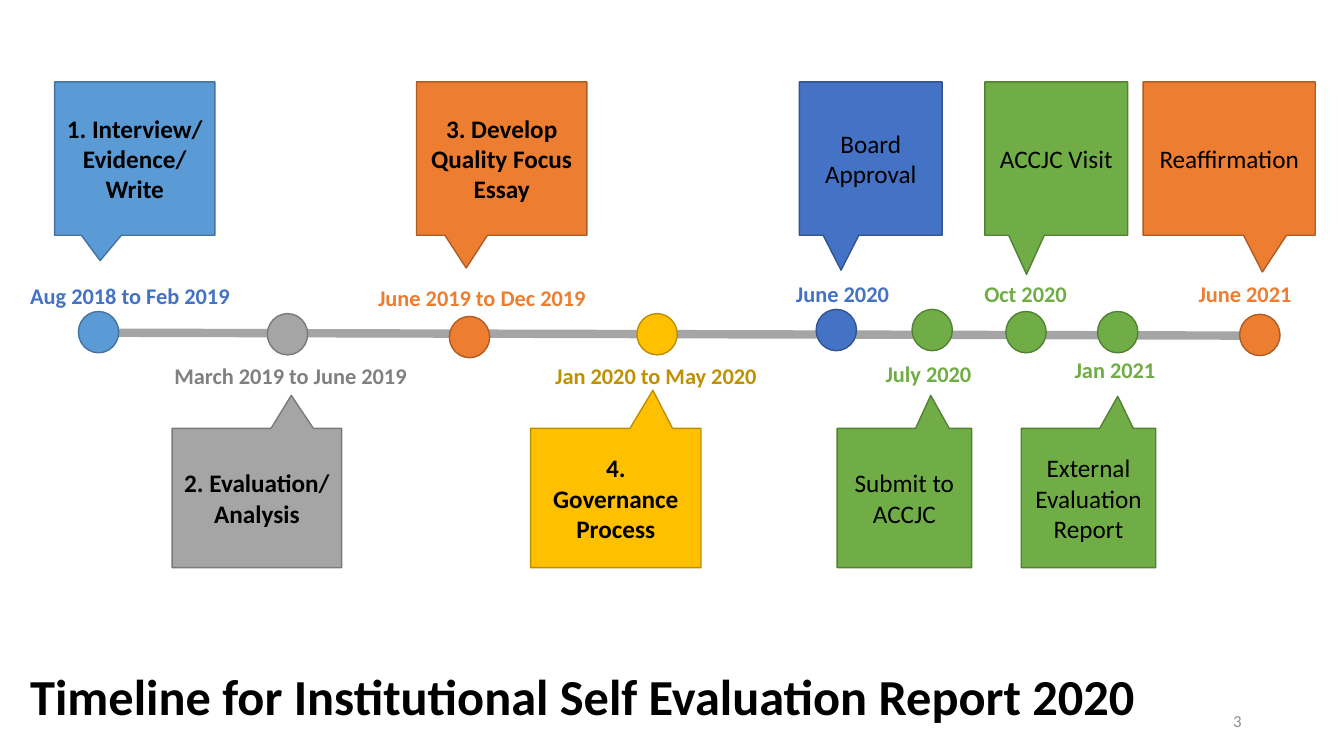
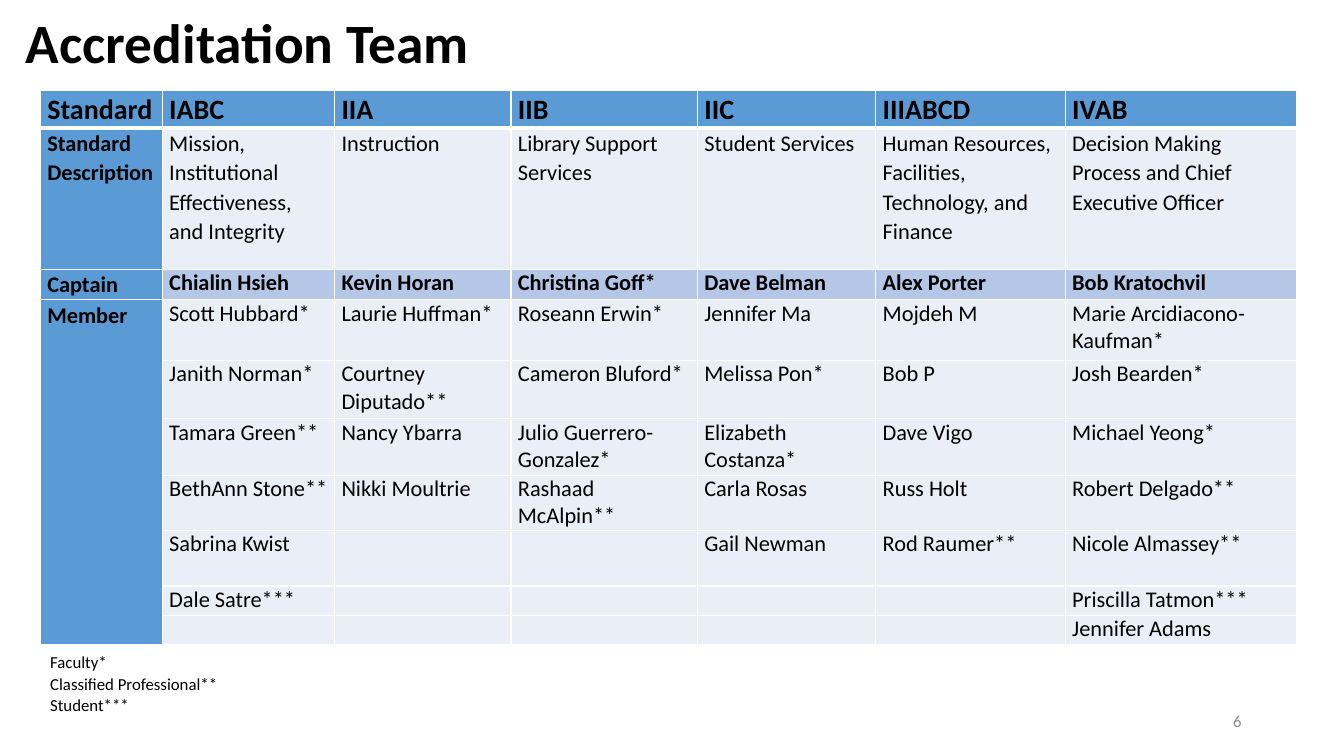
import lxml.etree
import pptx
import pptx.dml.color
import pptx.enum.shapes
import pptx.enum.text
import pptx.oxml.ns
import pptx.util

Pt = pptx.util.Pt
qn = pptx.oxml.ns.qn
SHAPE = pptx.enum.shapes.MSO_SHAPE
ALIGN = pptx.enum.text.PP_ALIGN
ANCHOR = pptx.enum.text.MSO_ANCHOR

BLACK, WHITE, BLUE, MIST, LAVENDER = "000000", "FFFFFF", "5B9BD5", "EAEFF7", "B4C7E7"
HUES = {
    "blue": (BLUE, "43739E", "4472C4"),
    "gray": ("A5A5A5", "7A7A7A", "808080"),
    "orange": ("ED7D31", "AF5C24", "ED7D31"),
    "gold": ("FFC000", "BD8E00", "BF9000"),
    "navy": ("4472C4", "325491", "4472C4"),
    "green": ("70AD47", "538035", "70AD47"),
}

MILESTONES = [
    ("1. Interview/\nEvidence/\nWrite", "blue", True, (39, 114.5), (-0.216, 0.666),
     (56, 222.5), "Aug 2018 to Feb 2019", (14.5, 198, 157.5)),
    ("2. Evaluation/\nAnalysis", "gray", True, (123, 121), (0.203, -0.737),
     (191, 224), "March 2019 to June 2019", (117.5, 255, 183)),
    ("3. Develop Quality Focus Essay", "orange", True, (297.5, 121.7), (-0.208, 0.714),
     (321, 226), "June 2019 to Dec 2019", (263, 199.5, 163.5)),
    ("4. Governance Process", "gold", True, (379, 121.7), (0.218, -0.774),
     (455, 224), "Jan 2020 to May 2020", (389.5, 255.5, 160.5)),
    ("Board Approval", "navy", False, (571, 102), (-0.208, 0.728),
     (583, 221), "June 2020", (561.5, 196.5, 81.5)),
    ("Submit to ACCJC", "green", False, (598, 96), (0.196, -0.737),
     (651.5, 221), "July 2020", (625.5, 254, 76.5)),
    ("ACCJC Visit", "green", False, (703.5, 102), (-0.208, 0.755),
     (718.5, 222.5), "Oct 2020", (696, 196.5, 74)),
    ("External Evaluation Report", "green", False, (729.5, 96), (0.218, -0.73),
     (784, 222.5), "Jan 2021", (760.5, 250.5, 72)),
    ("Reaffirmation", "orange", False, (816.5, 123), (0.193, 0.74),
     (885.5, 224.5), "June 2021", (849, 196.5, 81.5)),
]

TEAM = [
    ["Standard", "IABC", "IIA", "IIB", "IIC", "IIIABCD", "IVAB"],
    ["Standard Description", "Mission, Institutional Effectiveness, and Integrity", "Instruction",
     "Library Support Services", "Student Services",
     "Human Resources, Facilities, Technology, and Finance",
     "Decision Making Process and Chief Executive Officer"],
    ["Captain", "Chialin Hsieh", "Kevin Horan", "Christina Goff*", "Dave Belman",
     "Alex Porter", "Bob Kratochvil"],
    ["Member", "Scott Hubbard*", "Laurie Huffman*", "Roseann Erwin*", "Jennifer Ma",
     "Mojdeh M", "Marie Arcidiacono-Kaufman*"],
    ["", "Janith Norman*", "Courtney Diputado**", "Cameron Bluford*", "Melissa Pon*",
     "Bob P", "Josh Bearden*"],
    ["", "Tamara Green**", "Nancy Ybarra", "Julio Guerrero-Gonzalez*", "Elizabeth Costanza*",
     "Dave Vigo", "Michael Yeong*"],
    ["", "BethAnn Stone**", "Nikki Moultrie", "Rashaad McAlpin**", "Carla Rosas",
     "Russ Holt", "Robert Delgado**"],
    ["", "Sabrina Kwist", "", "", "Gail Newman", "Rod Raumer**", "Nicole Almassey**"],
    ["", "Dale Satre***", "", "", "", "", "Priscilla Tatmon***"],
    ["", "", "", "", "", "", "Jennifer Adams"],
]
TEAM_COLUMNS = [87.1, 123.1, 126, 133.2, 127.4, 135.4, 164.9]
TEAM_ROWS = [26.8, 101, 21.6, 43.2, 41.8, 40.3, 39.3, 39.8, 20.9, 20.9]


def rgb(code):
    return pptx.dml.color.RGBColor.from_string(code)


class Deck:
    """Holds the shared style and the slide being built."""

    font = "Calibri"

    def __init__(self):
        self.show = pptx.Presentation()
        self.show.slide_width, self.show.slide_height = Pt(960), Pt(540)

    def slide(self, number):
        self.shapes = self.show.slides.add_slide(self.show.slide_layouts[6]).shapes
        self.text(str(number), (678, 500.5, 216, 28.8), 12, "8C8C8C",
                  align=ALIGN.RIGHT, anchor=ANCHOR.MIDDLE)

    def lines(self, frame, words, size, color=BLACK, bold=False, align=ALIGN.LEFT, spacing=None):
        for index, line in enumerate(words.split("\n")):
            paragraph = frame.add_paragraph() if index else frame.paragraphs[0]
            paragraph.alignment = align
            paragraph.line_spacing = spacing
            if not line:
                lxml.etree.SubElement(paragraph._p, qn("a:endParaRPr"), sz=str(size * 100))
                continue
            run = paragraph.add_run()
            run.text = line
            run.font.name, run.font.size, run.font.bold = self.font, Pt(size), bold
            run.font.color.rgb = rgb(color)

    def text(self, words, box, size, color=BLACK, anchor=ANCHOR.TOP, wrap=True, **style):
        frame = self.shapes.add_textbox(*map(Pt, box)).text_frame
        frame.word_wrap, frame.vertical_anchor = wrap, anchor
        self.lines(frame, words, size, color, **style)

    def title(self, words, box, size):
        self.text(words, box, size, anchor=ANCHOR.MIDDLE, bold=True, spacing=0.9)

    def shape(self, preset, box, fill, edge):
        shape = self.shapes.add_shape(preset, *map(Pt, box))
        shape.shadow.inherit = False
        shape.fill.solid()
        shape.fill.fore_color.rgb = rgb(fill)
        shape.line.color.rgb = rgb(edge)
        shape.line.width = Pt(1)
        return shape

    def connector(self, start, end, color, width):
        connector = self.shapes.add_connector(
            pptx.enum.shapes.MSO_CONNECTOR.STRAIGHT, *map(Pt, start + end))
        connector.line.color.rgb = rgb(color)
        connector.line.width = Pt(width)
        lxml.etree.SubElement(connector._element.spPr, qn("a:effectLst"))

    def milestone(self, label, hue, bold, span, tip, dot, date, date_box):
        fill, edge, ink = HUES[hue]
        left, width = span
        top, height = (58.5, 109.5) if tip[1] > 0 else (306, 99.5)
        callout = self.shape(SHAPE.RECTANGULAR_CALLOUT, (left, top, width, height), fill, edge)
        callout.adjustments[0], callout.adjustments[1] = tip
        frame = callout.text_frame
        frame.word_wrap, frame.vertical_anchor = True, ANCHOR.MIDDLE
        frame.margin_left = frame.margin_right = Pt(7.5)
        self.lines(frame, label, 18, bold=bold, align=ALIGN.CENTER)
        self.shape(SHAPE.FLOWCHART_CONNECTOR, (*dot, 28.8, 29.5), fill, edge)
        date_left, date_top, date_width = date_box
        self.text(date, (date_left, date_top, date_width, 26.6), 16, ink, wrap=False, bold=True)

    def cell(self, cell, words, fill, size, bold, spacing, top, bottom):
        cell.margin_left = cell.margin_right = Pt(5)
        cell.margin_top = cell.margin_bottom = 0
        properties = cell._tc.get_or_add_tcPr()
        for side, width in (("L", 1), ("R", 1), ("T", top), ("B", bottom)):
            border = lxml.etree.SubElement(properties, qn("a:ln" + side), w=str(Pt(width)))
            paint = lxml.etree.SubElement(border, qn("a:solidFill"))
            lxml.etree.SubElement(paint, qn("a:srgbClr"), val=WHITE)
        cell.fill.solid()
        cell.fill.fore_color.rgb = rgb(fill)
        self.lines(cell.text_frame, words, size, bold=bold, spacing=spacing)

    def team_table(self, left, top):
        box = left, top, sum(TEAM_COLUMNS), sum(TEAM_ROWS)
        table = self.shapes.add_table(len(TEAM_ROWS), len(TEAM_COLUMNS), *map(Pt, box)).table
        table.first_row = table.horz_banding = False
        for column, width in zip(table.columns, TEAM_COLUMNS):
            column.width = Pt(width)
        for r, (row, height) in enumerate(zip(TEAM, TEAM_ROWS)):
            table.rows[r].height = Pt(height)
            for c, words in enumerate(row):
                heading = r == 0 or c == 0
                captain = r == 2
                self.cell(table.cell(r, c), words,
                          fill=BLUE if heading else LAVENDER if captain else MIST,
                          size=20 if r == 0 else 16,
                          bold=heading or captain,
                          spacing=1.07 if heading or r == 1 else None,
                          top=3 if r == 1 else 1,
                          bottom=3 if r == 0 else 1)
        table.cell(3, 0).merge(table.cell(len(TEAM) - 1, 0))


def main():
    deck = Deck()

    deck.slide(3)
    deck.connector((56, 237.6), (914.5, 239.8), "A5A5A5", 6)
    for milestone in MILESTONES:
        deck.milestone(*milestone)
    deck.title("Timeline for Institutional Self Evaluation Report 2020", (14.5, 461.5, 945.5, 76.5), 36)

    deck.slide(6)
    deck.title("Accreditation Team", (11.5, 9.5, 855.5, 45.5), 39.6)
    deck.team_table(28.8, 64.8)
    deck.text("Faculty*\nClassified Professional**\nStudent***", (28.8, 461, 150, 54), 12, spacing=1.07)

    deck.show.save("out.pptx")


if __name__ == "__main__":
    main()
